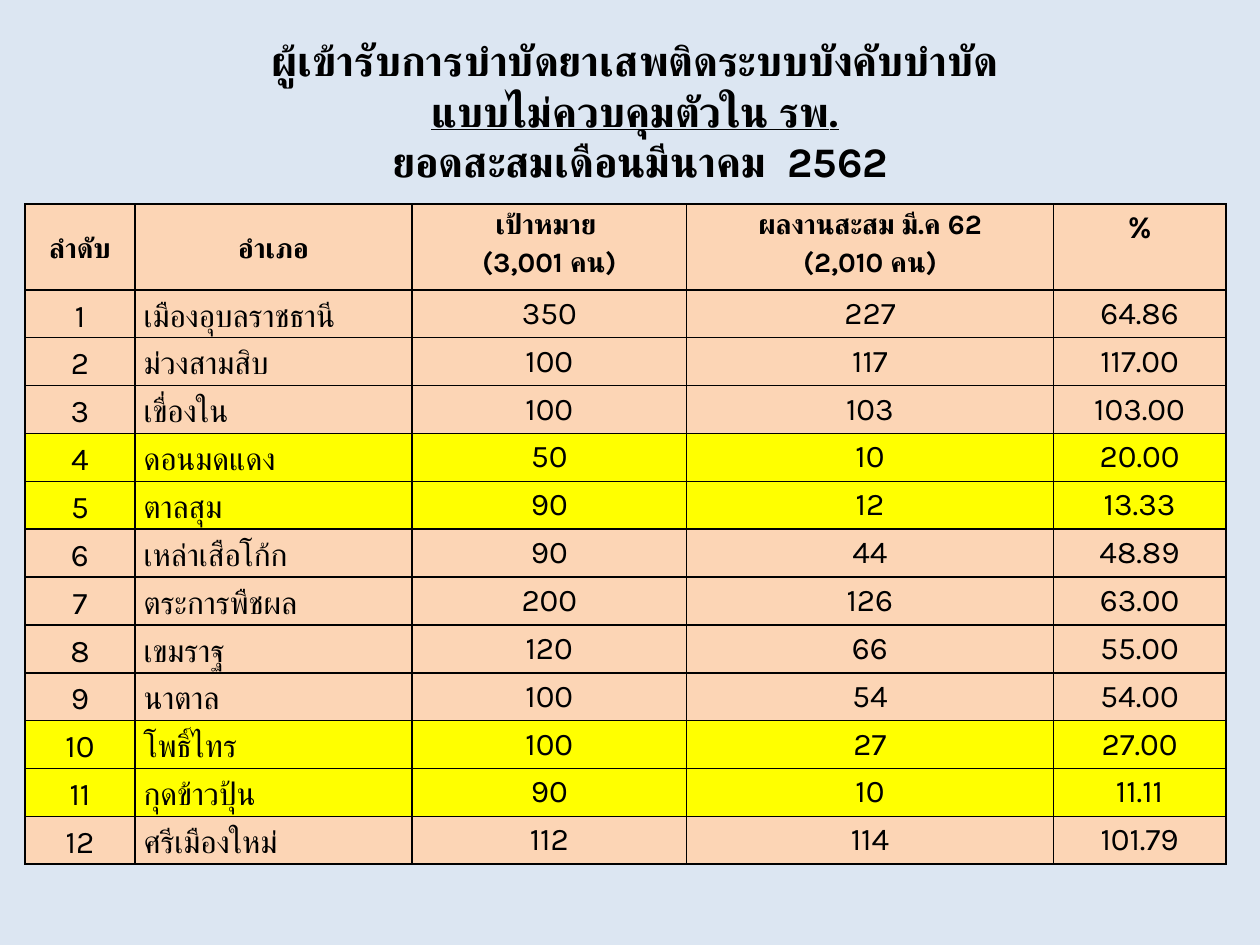
from typing import NamedTuple

from lxml.etree import SubElement
from pptx import Presentation
from pptx.dml.color import RGBColor
from pptx.enum.text import MSO_ANCHOR, PP_ALIGN
from pptx.oxml.ns import qn
from pptx.util import Inches, Pt

FONT = "Karla"
BLACK = RGBColor(0x00, 0x00, 0x00)
PALE_BLUE = RGBColor(0xDC, 0xE6, 0xF2)
PEACH = RGBColor(0xFC, 0xD5, 0xB5)
YELLOW = RGBColor(0xFF, 0xFF, 0x00)
LOW_PERCENT = 30


class Column(NamedTuple):
    heading: str
    width: float
    anchor: MSO_ANCHOR
    align: PP_ALIGN
    heading_size: int = 16


class District(NamedTuple):
    name: str
    target: int
    treated: int

    @property
    def percent(self) -> float:
        return self.treated / self.target * 100


COLUMNS = [
    Column("ลำดับ", 0.87, MSO_ANCHOR.MIDDLE, PP_ALIGN.CENTER),
    Column("อำเภอ", 2.2, MSO_ANCHOR.MIDDLE, PP_ALIGN.LEFT),
    Column("เป้าหมาย \n(3,001 คน)", 2.18, MSO_ANCHOR.TOP, PP_ALIGN.CENTER),
    Column("ผลงานสะสม มี.ค 62\n(2,010 คน)", 2.91, MSO_ANCHOR.TOP, PP_ALIGN.CENTER),
    Column("%", 1.37, MSO_ANCHOR.TOP, PP_ALIGN.CENTER, 18),
]
DISTRICTS = [
    District("เมืองอุบลราชธานี", 350, 227),
    District("ม่วงสามสิบ", 100, 117),
    District("เขื่องใน", 100, 103),
    District("ดอนมดแดง", 50, 10),
    District("ตาลสุม", 90, 12),
    District("เหล่าเสือโก้ก", 90, 44),
    District("ตระการพืชผล", 200, 126),
    District("เขมราฐ", 120, 66),
    District("นาตาล", 100, 54),
    District("โพธิ์ไทร", 100, 27),
    District("กุดข้าวปุ้น", 90, 10),
    District("ศรีเมืองใหม่", 112, 114),
]
TITLE_LINES = [
    ("ผู้เข้ารับการบำบัดยาเสพติดระบบบังคับบำบัด", False),
    ("แบบไม่ควบคุมตัวใน รพ.", True),
    (" ยอดสะสมเดือนมีนาคม  2562", False),
]
HEADER_HEIGHT, ROW_HEIGHT = 0.68, 0.38


def add_run(p, text: str, size: int, bold: bool, underline: bool = False) -> None:
    r = p.add_run()
    r.text = text
    formats = {"name": FONT, "size": Pt(size), "bold": bold, "underline": underline}
    for name, value in formats.items():
        setattr(r.font, name, value)
    r.font.color.rgb = BLACK
    SubElement(r.font._element, qn("a:cs"), typeface=FONT)


def add_borders(cell) -> None:
    """Draw a 1 pt black line on each side; must precede the cell's fill."""
    tc_pr = cell._tc.get_or_add_tcPr()
    for side in ("L", "R", "T", "B"):
        ln = SubElement(tc_pr, qn(f"a:ln{side}"), w=str(Pt(1)))
        fill = SubElement(ln, qn("a:solidFill"))
        SubElement(fill, qn("a:srgbClr"), val=str(BLACK))


def fill_cell(cell, text: str, anchor: MSO_ANCHOR, align: PP_ALIGN,
              size: int, bold: bool, color: RGBColor) -> None:
    formats = {
        "margin_left": Inches(0.07), "margin_right": Inches(0.07),
        "margin_top": 0, "margin_bottom": 0, "vertical_anchor": anchor,
    }
    for name, value in formats.items():
        setattr(cell, name, value)
    add_borders(cell)
    cell.fill.solid()
    cell.fill.fore_color.rgb = color
    tf = cell.text_frame
    for i, line in enumerate(text.split("\n")):
        p = tf.add_paragraph() if i else tf.paragraphs[0]
        p.alignment, p.line_spacing = align, 1.15
        add_run(p, line, size, bold)


def add_title(s) -> None:
    sp = s.shapes.add_textbox(Inches(0.51), Inches(0.29), Inches(9.06), Inches(1.17))
    tf = sp.text_frame
    tf.word_wrap = True
    tf.vertical_anchor = MSO_ANCHOR.MIDDLE
    p = tf.paragraphs[0]
    p.alignment = PP_ALIGN.CENTER
    for i, (text, underline) in enumerate(TITLE_LINES):
        if i:
            p.add_line_break()
        add_run(p, text, 24, True, underline)


def add_district_table(s) -> None:
    width = sum(col.width for col in COLUMNS)
    height = HEADER_HEIGHT + ROW_HEIGHT * len(DISTRICTS)
    table = s.shapes.add_table(len(DISTRICTS) + 1, len(COLUMNS), Inches(0.2),
                               Inches(1.62), Inches(width), Inches(height)).table
    for row in table.rows:
        row.height = Inches(ROW_HEIGHT)
    table.rows[0].height = Inches(HEADER_HEIGHT)

    for c, col in enumerate(COLUMNS):
        table.columns[c].width = Inches(col.width)
        fill_cell(table.cell(0, c), col.heading, col.anchor, PP_ALIGN.CENTER,
                  col.heading_size, True, PEACH)

    for number, d in enumerate(DISTRICTS, 1):
        color = YELLOW if d.percent < LOW_PERCENT else PEACH
        values = (number, d.name, d.target, d.treated, f"{d.percent:.2f}")
        for c, (col, value) in enumerate(zip(COLUMNS, values)):
            fill_cell(table.cell(number, c), str(value), col.anchor, col.align,
                      18, False, color)


def main() -> None:
    prs = Presentation()
    prs.slide_width, prs.slide_height = Inches(10), Inches(7.5)
    s = prs.slides.add_slide(prs.slide_layouts[6])
    s.background.fill.solid()
    s.background.fill.fore_color.rgb = PALE_BLUE
    add_title(s)
    add_district_table(s)
    prs.save("out.pptx")


if __name__ == "__main__":
    main()
